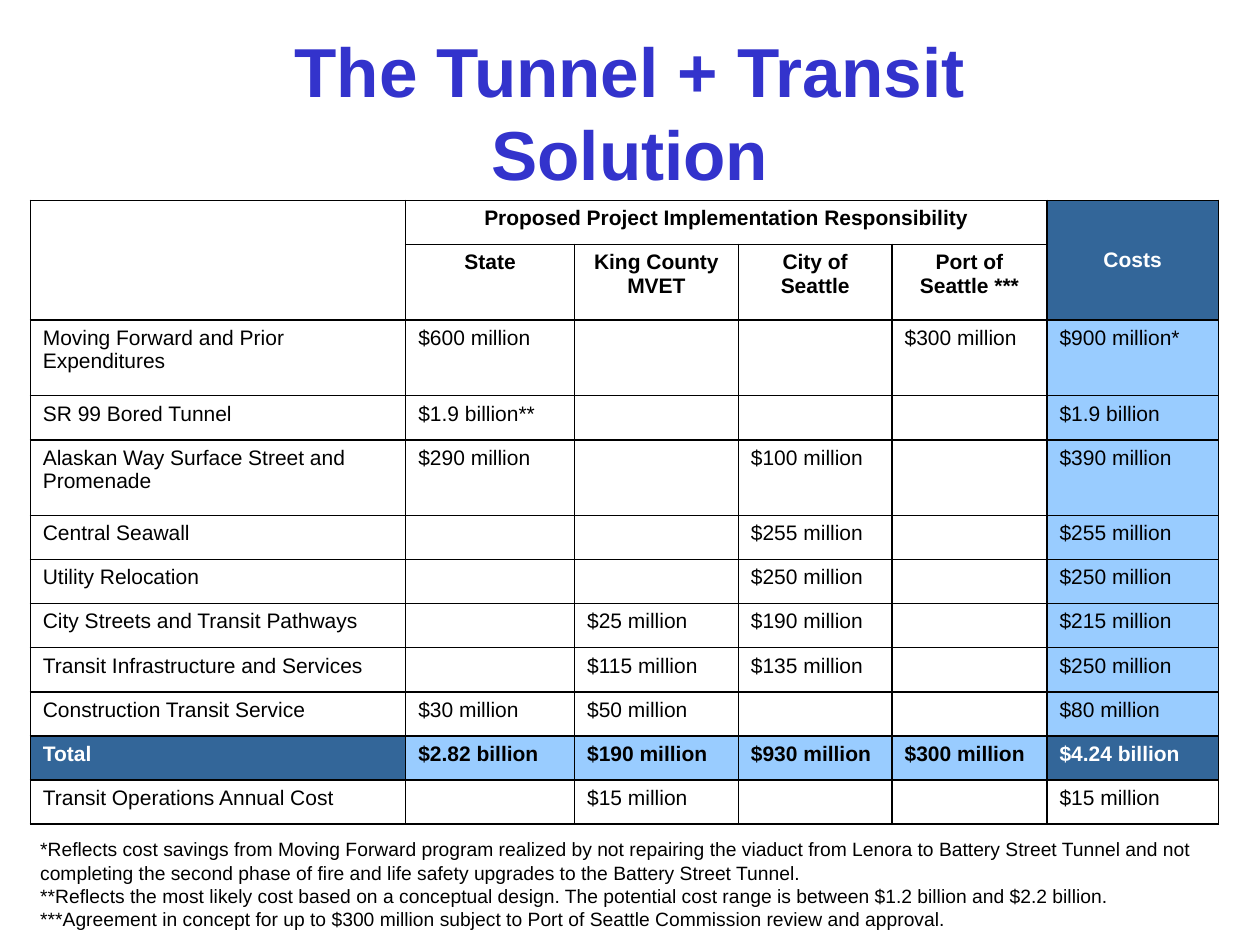
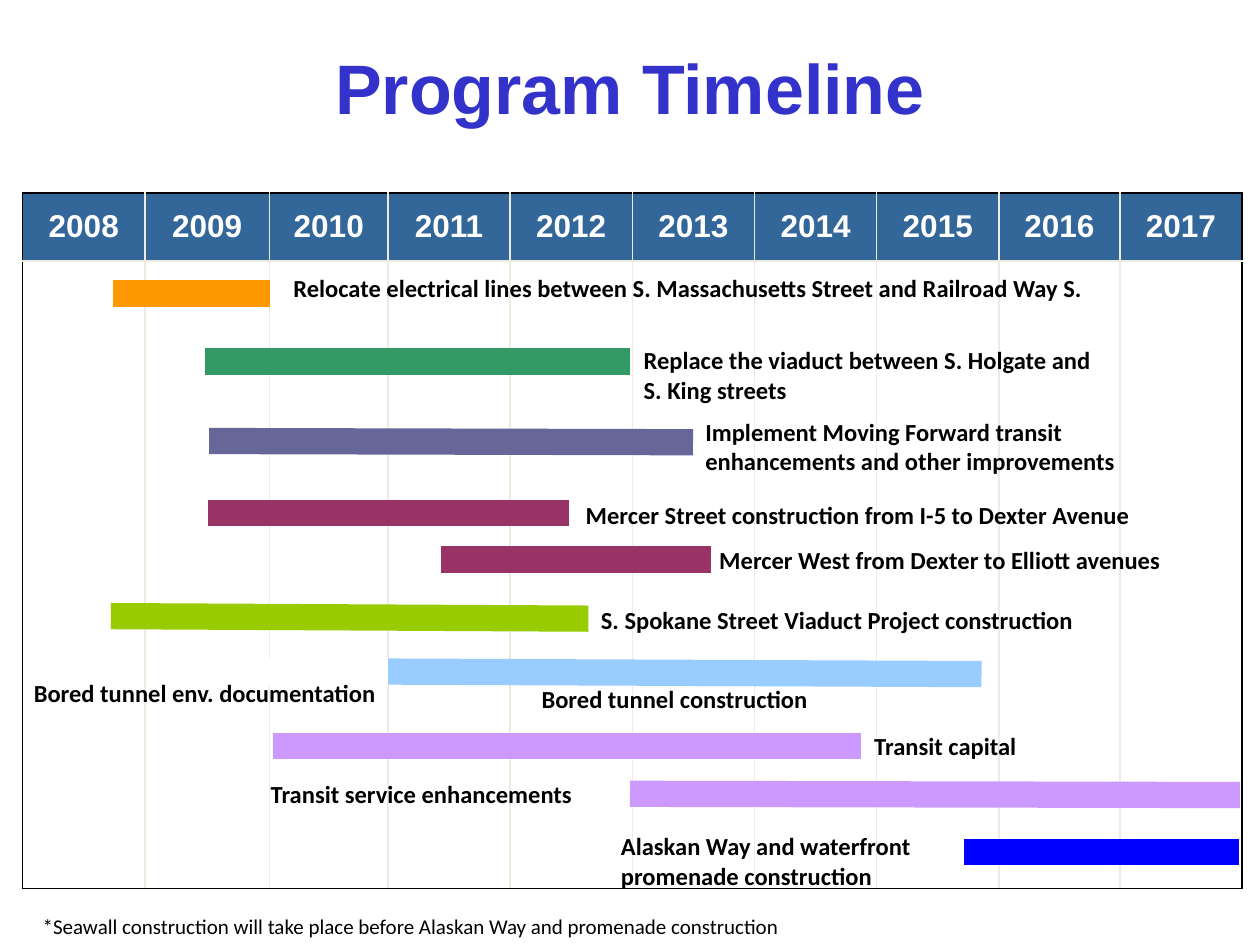
from dataclasses import dataclass

import lxml.etree
import pptx
import pptx.dml.color
import pptx.enum.shapes
import pptx.enum.text
import pptx.oxml.ns
import pptx.slide
import pptx.table
import pptx.text.text
import pptx.util

Inches = pptx.util.Inches
CENTER = pptx.enum.text.PP_ALIGN.CENTER
LEFT = pptx.enum.text.PP_ALIGN.LEFT
MIDDLE = pptx.enum.text.MSO_ANCHOR.MIDDLE

# Shared colours and text styles
BLACK, WHITE, TITLE_BLUE = "000000", "FFFFFF", "3333CC"
NAVY, SKY, PALE = "336699", "99CCFF", "EEECE1"


@dataclass(frozen=True)
class Style:
    size: float
    font: str = "Arial"
    colour: str = BLACK
    bold: bool = False
    align: int = LEFT


CELL = Style(12)
CELL_BOLD = Style(12, bold=True)
HEADING = Style(12, bold=True, align=CENTER)
COSTS_HEADING = Style(12, colour=WHITE, bold=True, align=CENTER)
TOTAL_WHITE = Style(12, colour=WHITE, bold=True)
YEAR = Style(18, colour=WHITE, bold=True, align=CENTER)
FOOTNOTE = Style(11)
BAR_LABEL = Style(14, "Calibri", bold=True)
TIMELINE_NOTE = Style(12, "Calibri")


@dataclass(frozen=True)
class Box:
    left: float
    top: float
    width: float
    height: float

    def lengths(self) -> list[int]:
        return [Inches(v) for v in (self.left, self.top, self.width, self.height)]


@dataclass(frozen=True)
class Bar:
    start: float
    end: float
    y: float
    colour: str
    label: str
    box: Box
    drop: float = 0


# Cost table content: label, state, county, city, port, total cost
PARTNERS = ["State", "King County MVET", "City of Seattle", "Port of Seattle ***"]
COST_ROWS = [
    ["Moving Forward and Prior Expenditures", "$600 million", "", "", "$300 million", "$900 million*"],
    ["SR 99 Bored Tunnel", "$1.9 billion**", "", "", "", "$1.9 billion"],
    ["Alaskan Way Surface Street and Promenade", "$290 million", "", "$100 million", "", "$390 million"],
    ["Central Seawall", "", "", "$255 million", "", "$255 million"],
    ["Utility Relocation", "", "", "$250 million", "", "$250 million"],
    ["City Streets and Transit Pathways", "", "$25 million", "$190 million", "", "$215 million"],
    ["Transit Infrastructure and Services", "", "$115 million", "$135 million", "", "$250 million"],
    ["Construction Transit Service", "$30 million", "$50 million", "", "", "$80 million"],
    ["Total", "$2.82 billion", "$190 million", "$930 million", "$300 million", "$4.24 billion"],
    ["Transit Operations Annual Cost", "", "$15 million", "", "", "$15 million"],
]
COST_NOTES = [
    "*Reflects cost savings from Moving Forward program realized by not repairing the viaduct "
    "from Lenora to Battery Street Tunnel and not completing the second phase of fire and life "
    "safety upgrades to the Battery Street Tunnel.",
    "**Reflects the most likely cost based on a conceptual design. The potential cost range is "
    "between $1.2 billion and $2.2 billion.",
    "***Agreement in concept for up to $300 million subject to Port of Seattle Commission "
    "review and approval.",
]

# Timeline content
BARS = [
    Bar(0.9, 2.14, 2.33, "FF9900",
        "Relocate electrical lines between S. Massachusetts Street and Railroad Way S.",
        Box(2.23, 2.12, 6.6, 0.37)),
    Bar(1.63, 5, 2.87, "339966", "Replace the viaduct between S. Holgate and\nS. King streets",
        Box(5.01, 2.69, 4.85, 0.43)),
    Bar(1.66, 5.5, 3.5, "666699",
        "Implement Moving Forward transit\nenhancements and other improvements",
        Box(5.5, 3.26, 4.5, 0.57), 0.01),
    Bar(1.65, 4.52, 4.07, "993366", "Mercer Street construction from I-5 to Dexter Avenue",
        Box(4.55, 3.92, 5.19, 0.33)),
    Bar(3.5, 5.64, 4.44, "993366", "Mercer West from Dexter to Elliott avenues",
        Box(5.61, 4.28, 4.39, 0.33)),
    Bar(0.88, 4.67, 4.89, "99CC00", "S. Spokane Street Viaduct Project construction",
        Box(4.67, 4.75, 4.99, 0.33), 0.02),
    Bar(1.16, 3.08, 5.33, WHITE, "Bored tunnel env. documentation", Box(0.17, 5.33, 3.83, 0.33)),
    Bar(3.08, 7.79, 5.33, SKY, "Bored tunnel construction", Box(4.2, 5.38, 3.83, 0.33), 0.02),
    Bar(2.17, 6.83, 5.92, "CC99FF", "Transit capital", Box(6.84, 5.75, 3.16, 0.33)),
    Bar(5, 9.84, 6.3, "CC99FF", "Transit service enhancements", Box(2.05, 6.13, 3.16, 0.33), 0.01),
    Bar(7.65, 9.83, 6.76, "0000FF", "Alaskan Way and waterfront promenade construction",
        Box(4.83, 6.55, 3.34, 0.57)),
]


def rgb(colour: str) -> pptx.dml.color.RGBColor:
    return pptx.dml.color.RGBColor.from_string(colour)


def a(tag: str) -> str:
    return pptx.oxml.ns.qn(f"a:{tag}")


def format_text(tf: pptx.text.text.TextFrame, style: Style) -> None:
    font = {"size": pptx.util.Pt(style.size), "name": style.font, "bold": style.bold}
    for p in tf.paragraphs:
        p.alignment = style.align
        for r in p.runs:
            for name, value in font.items():
                setattr(r.font, name, value)
            r.font.color.rgb = rgb(style.colour)


def add_title(s: pptx.slide.Slide, text: str, box: Box, size: float) -> None:
    title = s.shapes.title
    title.left, title.top, title.width, title.height = box.lengths()
    tf = title.text_frame
    tf.auto_size = pptx.enum.text.MSO_AUTO_SIZE.NONE
    tf.vertical_anchor = pptx.enum.text.MSO_ANCHOR.TOP
    tf.paragraphs[0].text = text
    format_text(tf, Style(size, colour=TITLE_BLUE, bold=True, align=CENTER))


def add_text(s: pptx.slide.Slide, text: str, box: Box, style: Style) -> None:
    tf = s.shapes.add_textbox(*box.lengths()).text_frame
    tf.word_wrap = True
    tf.text = text
    format_text(tf, style)


def set_border(cell: pptx.table._Cell, colours: list[str]) -> None:
    """Draw 1 pt borders in the order left, right, top, bottom."""
    tc_pr = cell._tc.get_or_add_tcPr()
    for i, (side, colour) in enumerate(zip("LRTB", colours)):
        ln = lxml.etree.Element(a(f"ln{side}"), w=str(pptx.util.Pt(1)))
        fill = lxml.etree.SubElement(ln, a("solidFill"))
        lxml.etree.SubElement(fill, a("srgbClr"), val=colour)
        tc_pr.insert(i, ln)


def add_grid(s: pptx.slide.Slide, box: Box, widths: list[float], heights: list[float],
             inner: str) -> pptx.table.Table:
    """Add an unfilled table with a black frame and inner rules of one colour."""
    n_rows, n_cols = len(heights), len(widths)
    table = s.shapes.add_table(n_rows, n_cols, *box.lengths()).table
    table.first_row = table.horz_banding = False
    for col, width in zip(table.columns, widths):
        col.width = Inches(width)
    for row, height in zip(table.rows, heights):
        row.height = Inches(height)
    for i in range(n_rows):
        for j in range(n_cols):
            edges = (j == 0, j == n_cols - 1, i == 0, i == n_rows - 1)
            cell = table.cell(i, j)
            cell.fill.background()
            set_border(cell, [BLACK if edge else inner for edge in edges])
            # Keep empty cells from stretching their row
            end = lxml.etree.SubElement(cell.text_frame.paragraphs[0]._p, a("endParaRPr"))
            end.set("sz", "1200")
    return table


def fill_cell(cell: pptx.table._Cell, text: str, style: Style, fill: str = "") -> None:
    if text:
        cell.text_frame.text = text
        format_text(cell.text_frame, style)
    if fill:
        cell.fill.solid()
        cell.fill.fore_color.rgb = rgb(fill)


def add_bar(s: pptx.slide.Slide, bar: Bar) -> None:
    c = s.shapes.add_connector(
        pptx.enum.shapes.MSO_CONNECTOR.STRAIGHT,
        Inches(bar.start), Inches(bar.y), Inches(bar.end), Inches(bar.y + bar.drop))
    c.line.width = pptx.util.Pt(15)
    c.line.color.rgb = rgb(bar.colour)
    lxml.etree.SubElement(c._element.spPr, a("effectLst"))
    add_text(s, bar.label, bar.box, BAR_LABEL)


def build_costs(s: pptx.slide.Slide) -> None:
    add_title(s, "The Tunnel + Transit\nSolution", Box(0, 0.17, 10, 1.38), 39.6)
    one_line, two_lines = 0.35, 0.6
    heights = [one_line, two_lines, two_lines, one_line, two_lines] + [one_line] * 7
    table = add_grid(s, Box(0.24, 1.59, 9.43, 4.95),
                     [2.98, 1.34, 1.3, 1.22, 1.23, 1.36], heights, BLACK)

    # Two-row heading
    table.cell(0, 0).merge(table.cell(1, 0))
    table.cell(0, 1).merge(table.cell(0, 4))
    table.cell(0, 5).merge(table.cell(1, 5))
    fill_cell(table.cell(0, 1), "Proposed Project Implementation Responsibility", HEADING)
    fill_cell(table.cell(0, 5), "Costs", COSTS_HEADING, NAVY)
    table.cell(0, 5).vertical_anchor = MIDDLE
    for j, partner in enumerate(PARTNERS, 1):
        fill_cell(table.cell(1, j), partner, HEADING)

    # Body rows; the total row and the cost column are tinted
    total = len(COST_ROWS) - 2
    for i, row in enumerate(COST_ROWS):
        for j, text in enumerate(row):
            style, fill = CELL, ""
            if i == total:
                style, fill = (TOTAL_WHITE, NAVY) if j in (0, 5) else (CELL_BOLD, SKY)
            elif i < total and j == 5:
                fill = SKY
            fill_cell(table.cell(i + 2, j), text, style, fill)

    add_text(s, "\n".join(COST_NOTES), Box(0.22, 6.6, 9.45, 0.84), FOOTNOTE)


def build_timeline(s: pptx.slide.Slide) -> None:
    add_title(s, "Program Timeline", Box(0.5, 0.3, 9, 1.25), 40)
    widths = [0.97, 0.99, 0.94] + [0.97] * 5 + [0.96, 0.97]
    table = add_grid(s, Box(0.18, 1.53, 9.65, 5.52), widths, [0.54, 4.98], PALE)
    for j in range(len(widths)):
        fill_cell(table.cell(0, j), str(2008 + j), YEAR, NAVY)
        table.cell(0, j).vertical_anchor = MIDDLE
    for bar in BARS:
        add_bar(s, bar)
    add_text(s, "*Seawall construction will take place before Alaskan Way and promenade construction",
             Box(0.24, 7.2, 9, 0.3), TIMELINE_NOTE)


def main() -> None:
    prs = pptx.Presentation()
    prs.slide_width, prs.slide_height = Inches(10), Inches(7.5)
    title_only = prs.slide_layouts[5]
    for build in (build_costs, build_timeline):
        build(prs.slides.add_slide(title_only))
    prs.save("out.pptx")


if __name__ == "__main__":
    main()
